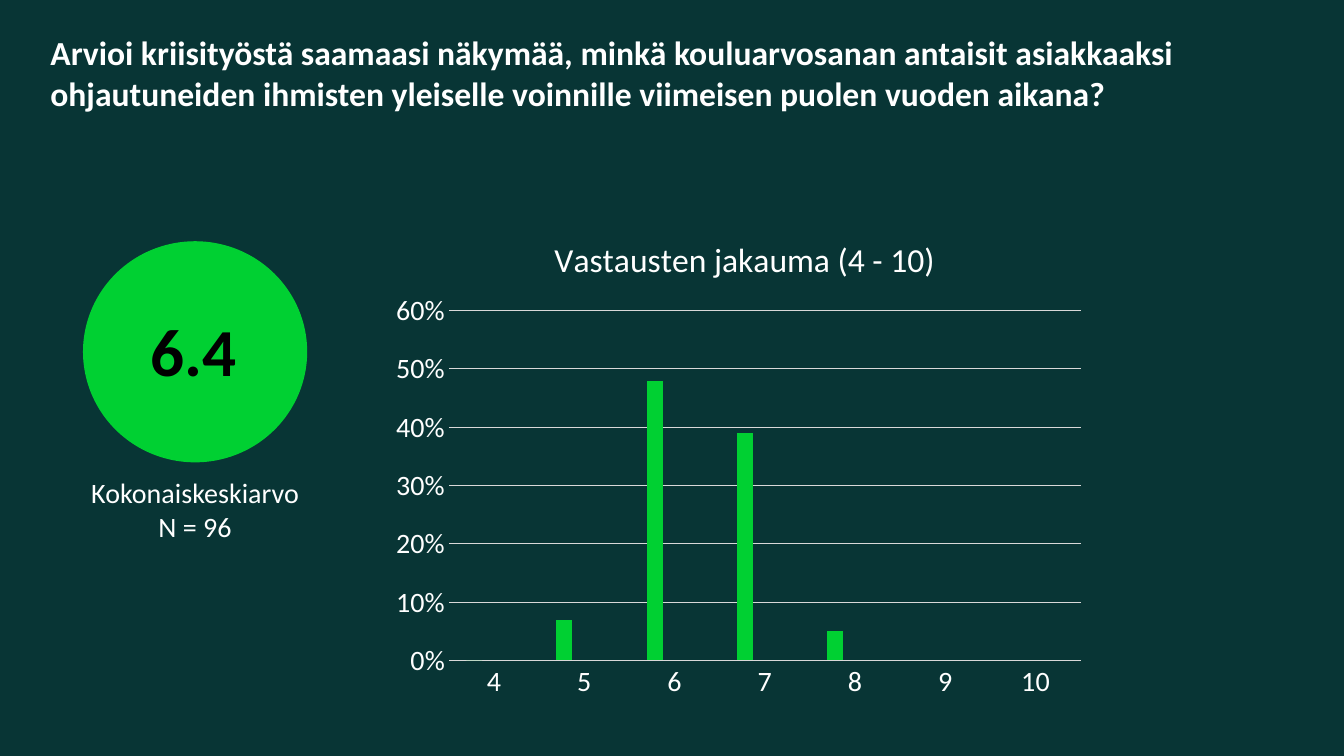
from dataclasses import dataclass

from lxml.etree import SubElement
from pptx import Presentation
from pptx.chart.data import CategoryChartData as ChartData
from pptx.dml.color import RGBColor as RGB
from pptx.enum.chart import XL_CHART_TYPE as Kind, XL_TICK_MARK as Tick
from pptx.enum.shapes import MSO_SHAPE as Shape
from pptx.enum.text import MSO_ANCHOR as Anchor, PP_ALIGN as Align
from pptx.oxml import parse_xml
from pptx.oxml.ns import nsdecls, qn
from pptx.util import Inches, Pt

FONT = "Calibri"
DARK, GREEN, WHITE, BLACK, GREY = "083535", "00D032", "FFFFFF", "000000", "D9D9D9"
GRADES = ["4", "5", "6", "7", "8", "9", "10"]


@dataclass
class Box:
    left: float
    top: float
    width: float
    height: float

    def emu(self) -> list:
        return [Inches(n) for n in (self.left, self.top, self.width, self.height)]


@dataclass
class Label:
    box: Box
    lines: list[str]
    size: int
    color: str
    bold: bool = False
    align: Align = Align.LEFT


@dataclass
class Series:
    name: str
    values: list
    color: str


LABELS = [
    Label(Box(0.73, 4.67, 2.41, 0.77), ["Kokonaiskeskiarvo", "N = 96"], 20, WHITE,
          align=Align.CENTER),
    Label(Box(1.39, 3.02, 1.08, 0.91), ["6.4"], 48, BLACK, True),
]
SERIES = [
    Series("Series 1", [0, 0.07, 0.48, 0.39, 0.05, None, None], GREEN),
    Series("Series 2", [None] * len(GRADES), "19413D"),
    Series("Series 3", [None] * len(GRADES), "C8F5C8"),
]
HEAD = Label(
    Box(0.4, 0.27, 12.67, 1.09),
    ["Arvioi kriisityöstä saamaasi näkymää, minkä kouluarvosanan antaisit asiakkaaksi "
     "ohjautuneiden ihmisten yleiselle voinnille viimeisen puolen vuoden aikana?"],
    24, WHITE, True)


def paint(fill, color: str) -> None:
    fill.solid()
    fill.fore_color.rgb = RGB.from_string(color)


def style(font, size: int, color: str, bold: bool = False) -> None:
    for key, value in {"name": FONT, "size": Pt(size), "bold": bold}.items():
        setattr(font, key, value)
    font.color.rgb = RGB.from_string(color)


def rule(line, color: str, width: float) -> None:
    line.color.rgb = RGB.from_string(color)
    line.width = Pt(width)


def write(shape, label: Label) -> None:
    shape.left, shape.top, shape.width, shape.height = label.box.emu()
    frame = shape.text_frame
    frame.word_wrap = True
    frame.vertical_anchor = Anchor.TOP
    frame.text = "\n".join(label.lines)
    for para in frame.paragraphs:
        para.alignment = label.align
        for run in para.runs:
            style(run.font, label.size, label.color, label.bold)


def place(part, index: int, **spots) -> None:
    """Fix a chart part at fractions of the chart area."""
    for old in part.findall(qn("c:layout")):
        part.remove(old)
    layout = parse_xml(f"<c:layout {nsdecls('c')}><c:manualLayout/></c:layout>")
    for tag, value in spots.items():
        SubElement(layout[0], qn(f"c:{tag}")).set("val", str(value))
    part.insert(index, layout)


def draw_chart(slide, box: Box) -> None:
    data = ChartData(number_format="0%")
    data.categories = GRADES
    for item in SERIES:
        data.add_series(item.name, item.values)
    chart = slide.shapes.add_chart(Kind.COLUMN_CLUSTERED, *box.emu(), data).chart
    style(chart.font, 10, BLACK)
    chart.has_legend = False
    chart.has_title = True
    frame = chart.chart_title.text_frame
    frame.text = "Vastausten jakauma (4 - 10)"
    style(frame.paragraphs[0].runs[0].font, 24, WHITE)

    plot = chart.plots[0]
    for key, value in {"gap_width": 219, "overlap": -27, "vary_by_categories": False}.items():
        setattr(plot, key, value)
    for series, item in zip(plot.series, SERIES):
        paint(series.format.fill, item.color)

    grades, shares = chart.category_axis, chart.value_axis
    for axis in (grades, shares):
        axis.major_tick_mark = axis.minor_tick_mark = Tick.NONE
        style(axis.tick_labels.font, 20, WHITE)
    rule(grades.format.line, GREY, 0.75)
    shares.format.line.fill.background()
    for key, value in {"minimum_scale": 0, "maximum_scale": 0.6, "major_unit": 0.1,
                       "has_major_gridlines": True}.items():
        setattr(shares, key, value)
    rule(shares.major_gridlines.format.line, GREY, 0.75)
    shares.tick_labels.number_format = "0%"
    shares.tick_labels.number_format_is_linked = False

    root = chart._chartSpace.chart
    place(root.find(qn("c:title")), 1, xMode="edge", yMode="edge", x=0.23, y=0.05)
    place(root.plotArea, 0, layoutTarget="inner", xMode="edge", yMode="edge",
          x=0.09, y=0.21, w=0.89, h=0.7)


def main() -> None:
    deck = Presentation()
    deck.slide_width, deck.slide_height = Inches(13.33), Inches(7.5)
    slide = deck.slides.add_slide(deck.slide_layouts[5])
    paint(slide.background.fill, DARK)
    write(slide.shapes.title, HEAD)

    disc = slide.shapes.add_shape(Shape.OVAL, *Box(0.83, 2.4, 2.21, 2.18).emu())
    disc.shadow.inherit = False
    paint(disc.fill, GREEN)
    rule(disc.line, GREEN, 1)

    draw_chart(slide, Box(3.82, 2.04, 7.04, 4.96))
    for label in LABELS:
        write(slide.shapes.add_textbox(*label.box.emu()), label)
    deck.save("out.pptx")


if __name__ == "__main__":
    main()
